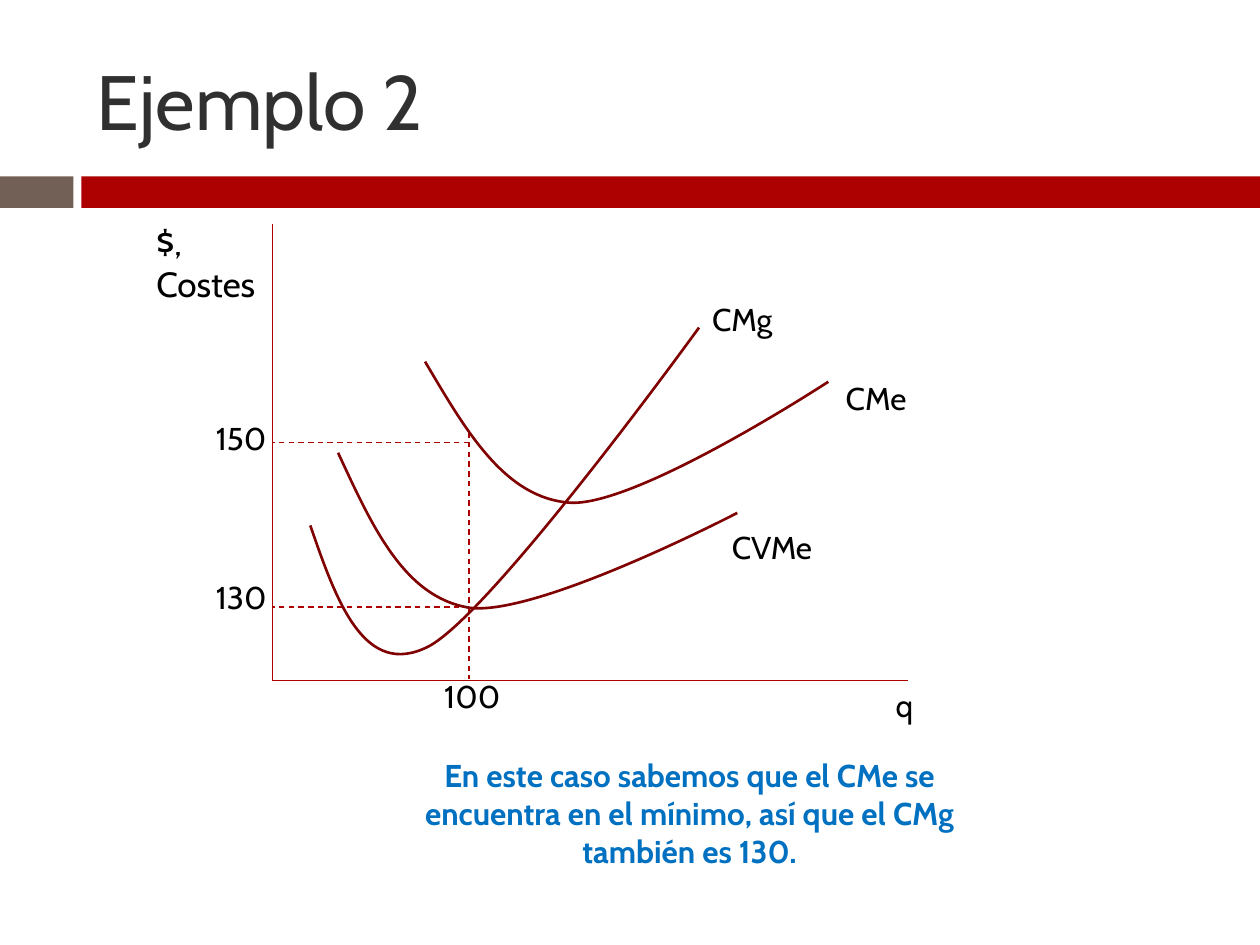
"""Build a slide on average and marginal cost curves."""
from typing import Any, NamedTuple

from lxml import etree
from pptx import Presentation
from pptx.dml.color import RGBColor
from pptx.enum.dml import MSO_LINE
from pptx.enum.shapes import MSO_CONNECTOR, MSO_SHAPE
from pptx.enum.text import MSO_ANCHOR, MSO_AUTO_SIZE, PP_ALIGN
from pptx.oxml.ns import qn
from pptx.util import Inches, Pt

RECT, STRAIGHT = MSO_SHAPE.RECTANGLE, MSO_CONNECTOR.STRAIGHT
DASH, SOLID = MSO_LINE.DASH, MSO_LINE.SOLID
MIDDLE, TOP = MSO_ANCHOR.MIDDLE, MSO_ANCHOR.TOP
LEFT, CENTER = PP_ALIGN.LEFT, PP_ALIGN.CENTER
NONE = MSO_AUTO_SIZE.NONE

RED = RGBColor(0xAD, 0x01, 0x01)
MAROON = RGBColor(0x80, 0x01, 0x01)
TAUPE = RGBColor(0x72, 0x60, 0x56)
BLUE = RGBColor(0x00, 0x70, 0xC0)
GRAY = RGBColor(0x30, 0x30, 0x30)
BLACK = RGBColor(0x00, 0x00, 0x00)

WIDE, HIGH = Inches(10), Inches(7.5)
COLS, ROWS = 1000, 750
ZERO_X, ZERO_Y = 216.5, 540.3
MID_X = 372.3
LOW_Y, TOP_Y = 481.7, 351

Point = tuple[float, float]


class Box(NamedTuple):
    """Hold a place in grid columns and rows."""
    col: float
    row: float
    wide: float
    high: float


class Label(NamedTuple):
    """Hold a text with its place and look."""
    text: str
    box: Box
    size: int = 18
    color: RGBColor = BLACK
    bold: bool = False
    align: PP_ALIGN = LEFT
    anchor: MSO_ANCHOR = TOP
    before: int = 0


class Rule(NamedTuple):
    """Hold a straight line between two grid points."""
    start: Point
    end: Point
    dash: MSO_LINE = SOLID


class Curve(NamedTuple):
    """Hold a box, a chain of cubic knots inside it and a turn in degrees."""
    box: Box
    knots: tuple[Point, ...]
    turn: float = 0


BARS = (
    (Box(0, 140, 58.3, 25), TAUPE),
    (Box(64.6, 140, 935.4, 25), RED),
)
TITLE = Label("Ejemplo 2", Box(66.7, 25, 892, 108), 44, GRAY, anchor=MIDDLE)
AXIS = Label("$, Costes", Box(114, 170, 110, 77), 20, before=7)
LABELS = (
    Label("En este caso sabemos que el CMe se encuentra en el mínimo, "
          "así que el CMg también es 130.",
          Box(295.3, 595.4, 504, 101), color=BLUE, bold=True, align=CENTER),
    Label("CMg", Box(555.3, 233, 106, 40)),
    Label("CMe", Box(661.4, 296, 106, 40)),
    Label("CVMe", Box(571, 414, 106, 40)),
    Label("q", Box(701, 539.4, 106, 40)),
    Label("130", Box(161.4, 454, 85, 40)),
    Label("150", Box(161.4, 328, 85, 40)),
    Label("100", Box(342.7, 532.4, 106, 40)),
)
RULES = (
    Rule((ZERO_X, 178), (ZERO_X, ZERO_Y)),
    Rule((ZERO_X, ZERO_Y), (720.4, ZERO_Y)),
    Rule((MID_X, 343), (MID_X, 539)),
    Rule((MID_X, LOW_Y), (ZERO_X, LOW_Y)),
    Rule((MID_X, TOP_Y), (ZERO_X, TOP_Y)),
)
RULES = RULES[:2] + tuple(rule._replace(dash=DASH) for rule in RULES[2:])
STEEP = ((0, 157), (21, 218), (43, 279), (94, 253),
         (145, 226), (308.5, 0), (308.5, 0))
BOWL = ((0, 0), (32, 54), (63, 109), (116, 112),
        (170, 114), (320, 16), (320, 16))
CURVES = (
    Curve(Box(246.3, 260, 308.5, 259), STEEP),
    Curve(Box(337.4, 287, 320, 112), BOWL),
    Curve(Box(262, 375, 320, 112), BOWL, 5.7),
)


def spot(col: float, row: float) -> tuple[int, int]:
    """Turn a grid point into slide lengths."""
    return round(WIDE * col / COLS), round(HIGH * row / ROWS)


def span(box: Box) -> tuple[int, ...]:
    """Turn a grid box into left, top, width and height."""
    return spot(box.col, box.row) + spot(box.wide, box.high)


def style(item: Any, values: dict[str, Any]) -> None:
    """Set each named value on the item."""
    for name, value in values.items():
        setattr(item, name, value)


def place(shape: Any, box: Box) -> None:
    """Move and size the shape to fit the box."""
    style(shape, dict(zip(("left", "top", "width", "height"), span(box))))


def write(shape: Any, label: Label) -> None:
    """Place the shape and fill it with the label's text."""
    place(shape, label.box)
    frame = shape.text_frame
    frame.text = label.text
    style(frame, {"word_wrap": True, "auto_size": NONE,
                  "vertical_anchor": label.anchor})
    para = frame.paragraphs[0]
    style(para, {"alignment": label.align, "space_before": Pt(label.before)})
    font = para.runs[0].font
    style(font, {"name": "Cabin", "size": Pt(label.size), "bold": label.bold})
    font.color.rgb = label.color


def plain(shape: Any) -> None:
    """Take the bullet and indent off the first paragraph."""
    props = shape.text_frame.paragraphs[0]._p.get_or_add_pPr()
    for name in ("marL", "indent"):
        props.set(name, "0")
    etree.SubElement(props, qn("a:buNone"))


def draw_bar(shapes: Any, box: Box, color: RGBColor) -> None:
    """Draw a filled bar with no outline."""
    bar = shapes.add_shape(RECT, *span(box))
    bar.shadow.inherit = False
    bar.fill.solid()
    bar.fill.fore_color.rgb = color
    bar.line.fill.background()


def draw_rule(shapes: Any, rule: Rule) -> None:
    """Draw a thin straight line."""
    line = shapes.add_connector(STRAIGHT, *spot(*rule.start), *spot(*rule.end))
    line.line.color.rgb = RED
    style(line.line, {"width": Pt(0.79), "dash_style": rule.dash})
    etree.SubElement(line._element.spPr, qn("a:effectLst"))


def bend(shape: Any, curve: Curve) -> None:
    """Fit the outline to its box and make each segment a cubic curve."""
    route = shape._element.find(".//" + qn("a:path"))
    for name, size in zip("wh", spot(curve.box.wide, curve.box.high)):
        route.set(name, str(size))
    for i, line in enumerate(route.findall(qn("a:lnTo"))):
        cubic = etree.Element(qn("a:cubicBezTo"))
        for knot in curve.knots[3 * i + 1:3 * i + 4]:
            x, y = spot(*knot)
            etree.SubElement(cubic, qn("a:pt"), x=str(x), y=str(y))
        route.replace(line, cubic)


def draw_curve(shapes: Any, curve: Curve) -> None:
    """Draw a chain of cubic curves as one open outline."""
    ends = [spot(*knot) for knot in curve.knots[::3]]
    pen = shapes.build_freeform(*ends[0])
    pen.add_line_segments(ends[1:], close=False)
    shape = pen.convert_to_shape()
    place(shape, curve.box)
    bend(shape, curve)
    shape.rotation = curve.turn
    shape.shadow.inherit = False
    shape.fill.background()
    shape.line.color.rgb = MAROON
    shape.line.width = Pt(1.5)


def main() -> None:
    """Build and save the slide."""
    deck = Presentation()
    style(deck, {"slide_width": WIDE, "slide_height": HIGH})
    slide = deck.slides.add_slide(deck.slide_layouts[1])
    shapes = slide.shapes
    write(shapes.title, TITLE)
    body = slide.placeholders[1]
    write(body, AXIS)
    plain(body)
    for box, color in BARS:
        draw_bar(shapes, box, color)
    for rule in RULES:
        draw_rule(shapes, rule)
    for curve in CURVES:
        draw_curve(shapes, curve)
    for label in LABELS:
        write(shapes.add_textbox(*span(label.box)), label)
    deck.save("out.pptx")


if __name__ == "__main__":
    main()
